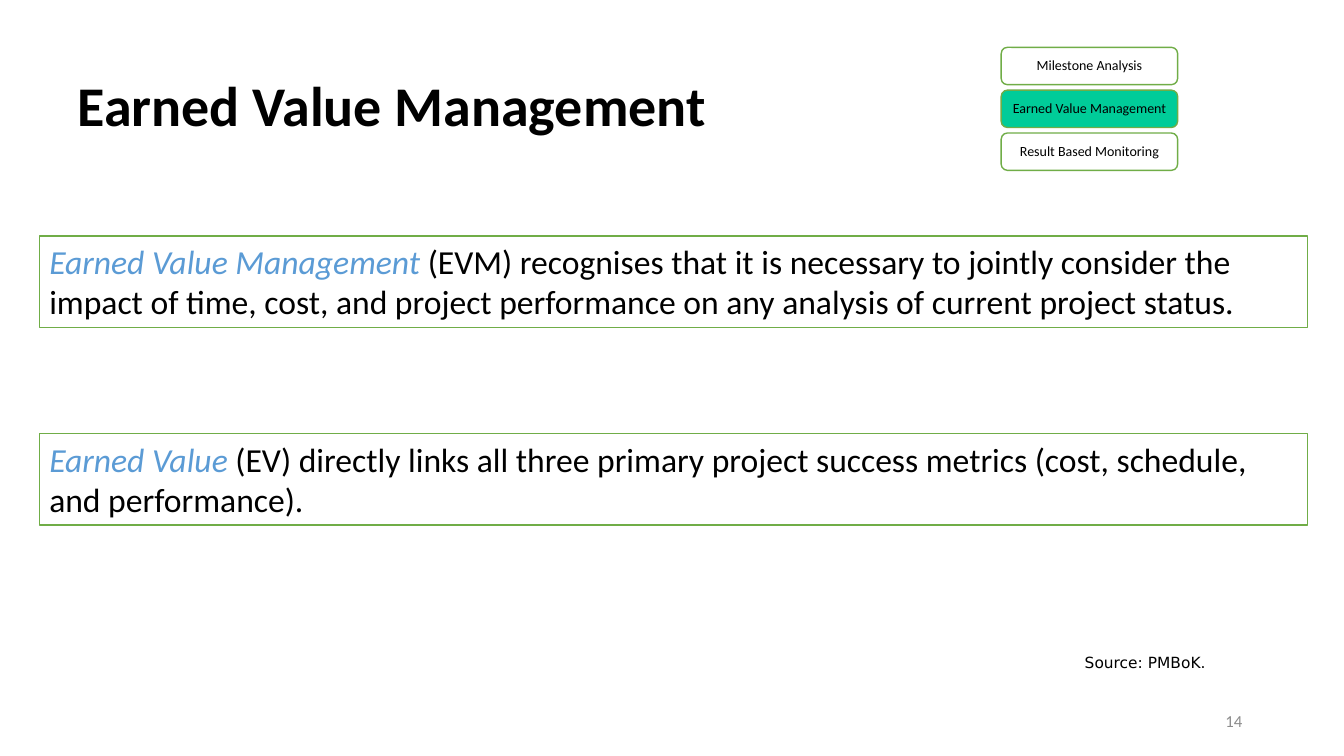
import pptx
import pptx.util
import pptx.dml.color
import pptx.enum.shapes
import pptx.enum.text

Inches = pptx.util.Inches
Kind = pptx.enum.shapes.MSO_SHAPE
Align = pptx.enum.text.PP_ALIGN
Anchor = pptx.enum.text.MSO_ANCHOR


class Deck:
    """Holds the style and the current slide, and adds elements to it."""

    font = "Calibri"
    hues = {"ink": "000000", "paper": "FFFFFF", "edge": "70AD47",
            "term": "5B9BD5", "live": "00CC99", "faint": "8C8C8C"}

    def __init__(self):
        self.file = pptx.Presentation()
        self.file.slide_width = Inches(13.33)
        self.file.slide_height = Inches(7.5)
        self.slide = self.file.slides.add_slide(self.file.slide_layouts[5])

    def hue(self, name):
        return pptx.dml.color.RGBColor.from_string(self.hues[name])

    def style(self, run, size, hue="ink", font=None, bold=False, slant=False):
        run.font.name = font or self.font
        run.font.size = pptx.util.Pt(size)
        run.font.color.rgb = self.hue(hue)
        run.font.bold = bold
        run.font.italic = slant

    def title(self, text, *area):
        head = self.slide.shapes.title
        head.left, head.top, head.width, head.height = map(Inches, area)
        frame = head.text_frame
        frame.text = text
        frame.auto_size = pptx.enum.text.MSO_AUTO_SIZE.NONE
        frame.vertical_anchor = Anchor.MIDDLE
        para = frame.paragraphs[0]
        para.alignment = Align.LEFT
        para.line_spacing = 0.9
        self.style(para.runs[0], 40, bold=True)

    def panel(self, kind, fill, *area):
        shape = self.slide.shapes.add_shape(kind, *map(Inches, area))
        shape.shadow.inherit = False
        shape.fill.solid()
        shape.fill.fore_color.rgb = self.hue(fill)
        shape.line.color.rgb = self.hue("edge")
        shape.line.width = pptx.util.Pt(1)
        return shape.text_frame

    def point(self, term, rest, *area):
        frame = self.panel(Kind.RECTANGLE, "paper", *area)
        frame.word_wrap = True
        frame.vertical_anchor = Anchor.TOP
        para = frame.paragraphs[0]
        para.alignment = Align.LEFT
        for text, hue in ((term, "term"), (rest, "ink")):
            run = para.add_run()
            run.text = text
            self.style(run, 24, hue, slant=hue == "term")

    def step(self, text, fill, *area):
        frame = self.panel(Kind.ROUNDED_RECTANGLE, fill, *area)
        frame.text = text
        frame.word_wrap = True
        frame.vertical_anchor = Anchor.MIDDLE
        frame.margin_left = frame.margin_right = Inches(0.05)
        frame.margin_top = frame.margin_bottom = Inches(0.05)
        para = frame.paragraphs[0]
        para.alignment = Align.CENTER
        para.line_spacing = 0.9
        self.style(para.runs[0], 10)

    def note(self, text, size, align, anchor, *area, hue="ink", font=None):
        frame = self.slide.shapes.add_textbox(*map(Inches, area)).text_frame
        frame.text = text
        frame.word_wrap = True
        frame.vertical_anchor = anchor
        para = frame.paragraphs[0]
        para.alignment = align
        self.style(para.runs[0], size, hue, font)


def main():
    deck = Deck()
    topic = "Earned Value Management"
    deck.title(topic, 0.67, 0.45, 12, 1.25)

    points = [
        ("Earned Value Management ",
         "(EVM) recognises that it is necessary to jointly consider the impact "
         "of time, cost, and project performance on any analysis of current "
         "project status."),
        ("Earned Value ",
         "(EV) directly links all three primary project success metrics "
         "(cost, schedule, and performance)."),
    ]
    for row, (term, rest) in enumerate(points):
        deck.point(term, rest, 0.39, 2.34 + row * 1.96, 12.58, 0.91)

    steps = ["Milestone Analysis", topic, "Result Based Monitoring"]
    for row, text in enumerate(steps):
        fill = "live" if text == topic else "paper"
        deck.step(text, fill, 9.93, 0.47 + row * 0.425, 1.75, 0.37)

    deck.note("14", 12, Align.RIGHT, Anchor.MIDDLE, 9.42, 6.95, 3, 0.4,
              hue="faint")
    deck.note("Source: PMBoK.", 11, Align.LEFT, Anchor.TOP,
              10.66, 6.43, 2.85, 0.28, font="DejaVu Sans")
    deck.file.save("out.pptx")


if __name__ == "__main__":
    main()
